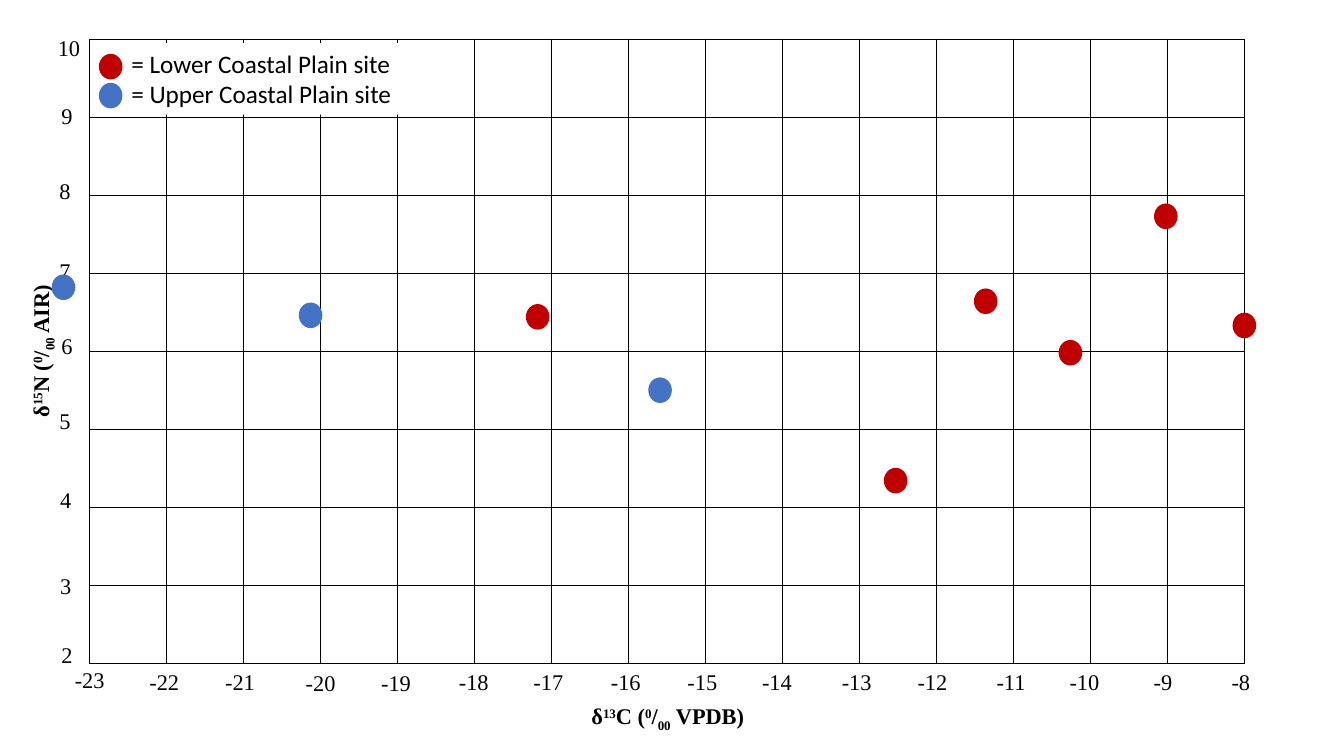
from dataclasses import dataclass

from lxml import etree
from pptx import Presentation
from pptx.dml.color import RGBColor
from pptx.enum.shapes import MSO_SHAPE
from pptx.enum.text import MSO_ANCHOR, MSO_AUTO_SIZE, PP_ALIGN
from pptx.oxml.ns import qn
from pptx.util import Cm, Pt

OVAL, RECT = MSO_SHAPE.OVAL, MSO_SHAPE.RECTANGLE
CENTER, LEFT = PP_ALIGN.CENTER, PP_ALIGN.LEFT
MIDDLE, TOP = MSO_ANCHOR.MIDDLE, MSO_ANCHOR.TOP
GROW = MSO_AUTO_SIZE.SHAPE_TO_FIT_TEXT

COLORS = {"lower": "C00000", "upper": "4472C4", "black": "000000", "white": "FFFFFF"}
SERIF, SANS = "Times New Roman", "Calibri"

# Grid in cm, and the data values at its top left corner
GRID_X, GRID_Y = 2.26, 0.99
COLS, ROWS = 15, 8
COL_W, ROW_H = 1.94, 15.72 / ROWS
MIN_C, MAX_N = -23, 10


@dataclass
class Dot:
    carbon: float
    nitro: float
    site: str


@dataclass
class Label:
    text: str
    x: float
    y: float
    width: float = 1.27


@dataclass
class Part:
    text: str
    base: int = 0


@dataclass
class Key:
    text: str
    site: str
    y: float


DOTS = [
    Dot(-8, 6.33, "lower"), Dot(-9.02, 7.73, "lower"), Dot(-10.26, 5.98, "lower"),
    Dot(-11.36, 6.64, "lower"), Dot(-23.34, 6.82, "upper"), Dot(-20.13, 6.46, "upper"),
    Dot(-15.59, 5.5, "upper"), Dot(-12.53, 4.34, "lower"), Dot(-17.18, 6.44, "lower"),
]
KEYS = [
    Key("= Lower Coastal Plain site", "lower", 1.68),
    Key("= Upper Coastal Plain site", "upper", 2.41),
]

# Hand-placed tick centres in cm
TICK_X = [2.26, 4.14, 6.05, 8.08, 9.98, 11.94, 13.82, 15.77,
          17.7, 19.58, 21.59, 23.5, 25.48, 27.33, 29.31, 31.27]
LINE_Y = 17.18
SHIFT_Y = {-23: 17.13, -20: 17.21, -19: 17.21}
TICKS_C = [Label(str(c), x, SHIFT_Y.get(c, LINE_Y)) for c, x in enumerate(TICK_X, MIN_C)]
TICKS_N = [
    Label("10", 1.74, 1.21, 1.09), Label("9", 1.69, 2.93, 0.79),
    Label("8", 1.64, 4.81, 0.79), Label("7", 1.64, 6.82, 0.79),
    Label("6", 1.69, 8.72, 0.79), Label("5", 1.64, 10.6, 0.79),
    Label("4", 1.66, 12.59, 0.79), Label("3", 1.66, 14.77, 0.79),
    Label("2", 1.69, 16.5, 0.79),
]


def color(name: str) -> RGBColor:
    return RGBColor.from_string(COLORS[name])


def add_run(para, part: Part, font: str, size: int, bold: bool = False) -> None:
    run = para.add_run()
    run.text = part.text
    run.font.name, run.font.size, run.font.bold = font, Pt(size), bold
    run.font.color.rgb = color("black")
    if part.base:
        run._r.get_or_add_rPr().set("baseline", str(part.base * 1000))


def add_label(slide, label: Label, parts: list[Part], bold: bool = False, turn: int = 0) -> None:
    high = 0.94
    box = slide.shapes.add_textbox(Cm(label.x - label.width / 2), Cm(label.y - high / 2),
                                   Cm(label.width), Cm(high))
    box.rotation = turn
    frame = box.text_frame
    frame.word_wrap, frame.auto_size = False, GROW
    para = frame.paragraphs[0]
    para.alignment = CENTER
    for part in parts:
        add_run(para, part, SERIF, 16, bold)


def add_dot(slide, x: float, y: float, site: str) -> None:
    wide, high = 0.56, 0.61
    dot = slide.shapes.add_shape(OVAL, Cm(x - wide / 2), Cm(y - high / 2), Cm(wide), Cm(high))
    dot.shadow.inherit = False
    dot.fill.solid()
    dot.fill.fore_color.rgb = color(site)
    dot.line.color.rgb = color(site)
    dot.line.width = Pt(1)


def add_border(cell) -> None:
    props = cell._tc.get_or_add_tcPr()
    for side in ("lnL", "lnR", "lnT", "lnB"):
        line = etree.SubElement(props, qn(f"a:{side}"), w=str(Pt(1)))
        fill = etree.SubElement(line, qn("a:solidFill"))
        etree.SubElement(fill, qn("a:srgbClr"), val=COLORS["black"])
    cell.fill.background()


def add_grid(slide) -> None:
    table = slide.shapes.add_table(ROWS, COLS, Cm(GRID_X), Cm(GRID_Y),
                                   Cm(COLS * COL_W), Cm(ROWS * ROW_H)).table
    table.first_row = table.horz_banding = False
    for col in table.columns:
        col.width = Cm(COL_W)
    for row in table.rows:
        row.height = Cm(ROW_H)
    for cell in table.iter_cells():
        add_border(cell)


def add_legend(slide) -> None:
    box = slide.shapes.add_shape(RECT, Cm(2.34), Cm(1.09), Cm(8.03), Cm(1.8))
    box.shadow.inherit = False
    box.fill.solid()
    box.fill.fore_color.rgb = color("white")
    box.line.fill.background()
    frame = box.text_frame
    frame.word_wrap, frame.vertical_anchor = True, TOP
    for i, key in enumerate(KEYS):
        para = frame.add_paragraph() if i else frame.paragraphs[0]
        para.alignment = LEFT
        para._p.get_or_add_pPr().set("marL", str(Cm(0.72)))
        add_run(para, Part(key.text), SANS, 18)
        add_dot(slide, 2.79, key.y, key.site)


def axis_name(mass: str, sign: str, scale: str) -> list[Part]:
    return [Part("δ"), Part(mass, 30), Part(f"{sign} ("), Part("0", 30),
            Part("/"), Part("00", -25), Part(f" {scale})")]


def main() -> None:
    deck = Presentation()
    deck.slide_width, deck.slide_height = Cm(33.87), Cm(19.05)
    slide = deck.slides.add_slide(deck.slide_layouts[6])

    # Grid
    add_grid(slide)

    # Axis names and ticks
    add_label(slide, Label("", 16.83, 18.05, 4.55), axis_name("13", "C", "VPDB"), True)
    add_label(slide, Label("", 1.02, 8.85, 4.01), axis_name("15", "N", "AIR"), True, 270)
    for tick in TICKS_C + TICKS_N:
        add_label(slide, tick, [Part(tick.text)])

    # Data points
    for dot in DOTS:
        add_dot(slide, GRID_X + (dot.carbon - MIN_C) * COL_W,
                GRID_Y + (MAX_N - dot.nitro) * ROW_H, dot.site)

    # Legend
    add_legend(slide)

    deck.save("out.pptx")


if __name__ == "__main__":
    main()
